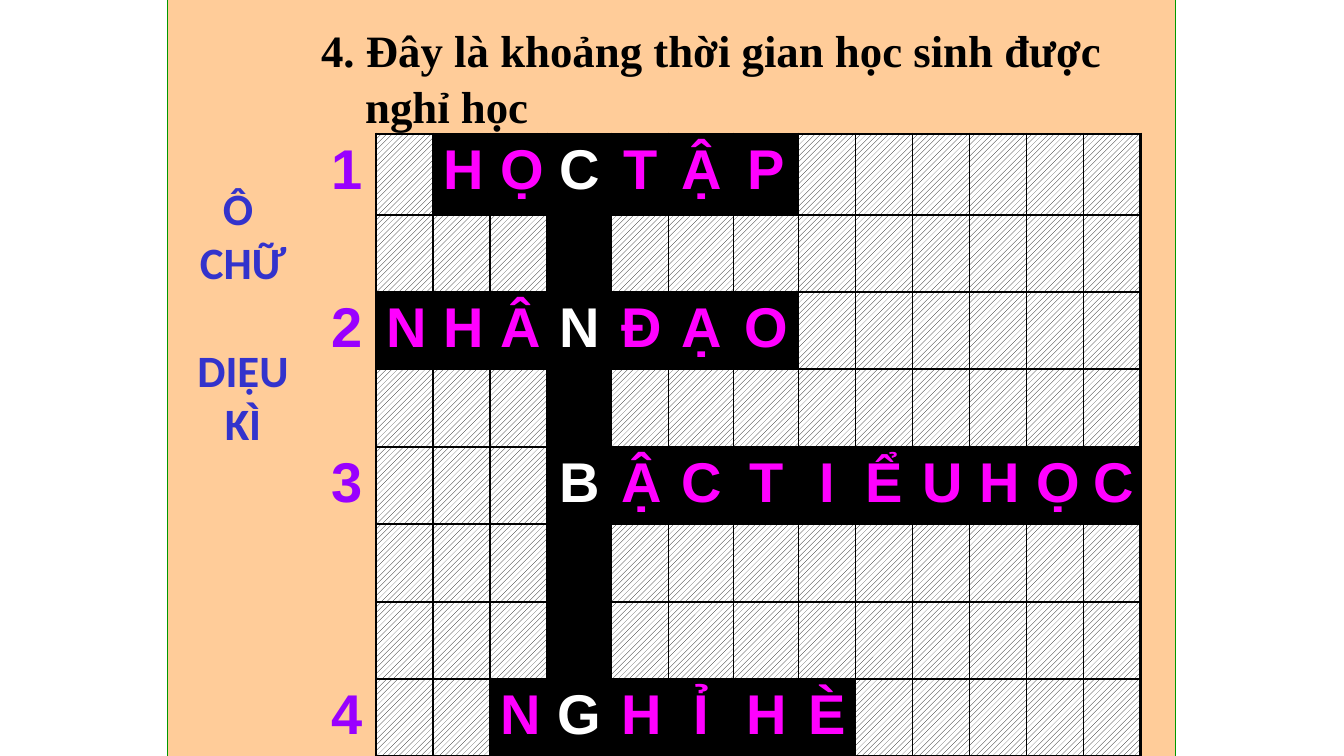
from lxml import etree
from pptx import Presentation
from pptx.dml.color import RGBColor
from pptx.enum.dml import MSO_PATTERN
from pptx.enum.shapes import MSO_SHAPE
from pptx.enum.text import MSO_ANCHOR, MSO_AUTO_SIZE, PP_ALIGN
from pptx.oxml.ns import qn
from pptx.util import Pt

RECT = MSO_SHAPE.RECTANGLE
HATCH = MSO_PATTERN.WIDE_UPWARD_DIAGONAL
TOP = MSO_ANCHOR.TOP
NO_FIT = MSO_AUTO_SIZE.NONE
LEFT, CENTER = PP_ALIGN.LEFT, PP_ALIGN.CENTER

SCALE = 914400 / 100.8
COLORS = {
    "peach": "FFCC99", "green": "009900", "black": "000000", "white": "FFFFFF",
    "number": "9900FF", "letter": "FF00FF", "label": "3333CC",
}
KEY_COL = 4
COL_WIDTHS = [57, 57, 57, 57, 65, 57, 65, 65] + [57] * 6
ROW_HEIGHTS = [81, 77, 77, 78, 77, 78, 77, 77]
# Row: (clue number, first column, answer)
ANSWERS = {
    0: ("1", 2, "HỌCTẬP"),
    2: ("2", 1, "NHÂNĐẠO"),
    4: ("3", 4, "BẬCTIỂUHỌC"),
    7: ("4", 3, "NGHỈHÈ"),
}


def px(n):
    return round(n * SCALE)


def color(name):
    return RGBColor.from_string(COLORS[name])


class CrosswordSlide:
    def __init__(self, prs):
        self.slide = prs.slides.add_slide(prs.slide_layouts[5])
        self.shapes = self.slide.shapes

    def style(self, p, font, size, ink, align):
        p.alignment = align
        p.font.name = font
        p.font.size = Pt(size)
        p.font.bold = True
        p.font.color.rgb = color(ink)

    def backdrop(self, x, y, w, h):
        sp = self.shapes.add_shape(RECT, px(x), px(y), px(w), px(h))
        sp.shadow.inherit = False
        sp.fill.solid()
        sp.fill.fore_color.rgb = color("peach")
        sp.line.color.rgb = color("green")
        sp.line.width = Pt(0.75)
        # The title placeholder stays in front of the backdrop
        self.shapes.title._element.addprevious(sp._element)

    def title(self, text, x, y, w, h, hanging):
        sp = self.shapes.title
        sp.left, sp.top, sp.width, sp.height = px(x), px(y), px(w), px(h)
        tf = sp.text_frame
        tf.text = text
        tf.word_wrap = True
        tf.auto_size = NO_FIT
        tf.vertical_anchor = TOP
        p = tf.paragraphs[0]
        self.style(p, "Times New Roman", 32, "black", LEFT)
        p.line_spacing = 1.05
        pPr = p._p.get_or_add_pPr()
        pPr.set("marL", str(px(hanging)))
        pPr.set("indent", str(-px(hanging)))

    def label(self, lines, x, y, w, h):
        tf = self.shapes.add_textbox(px(x), px(y), px(w), px(h)).text_frame
        tf.word_wrap = False
        tf.text = "\n".join(lines)
        for p in tf.paragraphs:
            self.style(p, "Calibri", 32, "label", CENTER)

    def borders(self, cell, **widths):
        tcPr = cell._tc.get_or_add_tcPr()
        for side in "LRTB":
            width = widths.get(side, 0)
            ln = etree.SubElement(tcPr, qn("a:ln" + side), w=str(Pt(width)))
            if width:
                fill = etree.SubElement(ln, qn("a:solidFill"))
                etree.SubElement(fill, qn("a:srgbClr"), val=COLORS["black"])
            else:
                etree.SubElement(ln, qn("a:noFill"))

    def cell(self, cell, text, fill, ink):
        if fill == "hatch":
            cell.fill.patterned()
            cell.fill.pattern = HATCH
            cell.fill.fore_color.rgb = color("black")
            cell.fill.back_color.rgb = color("white")
        else:
            cell.fill.solid()
            cell.fill.fore_color.rgb = color(fill)
        if text:
            cell.text = text
            self.style(cell.text_frame.paragraphs[0], "Arial", 40, ink, CENTER)

    def crossword(self, x, y):
        rows, cols = len(ROW_HEIGHTS), len(COL_WIDTHS)
        table = self.shapes.add_table(rows, cols, px(x), px(y), px(sum(COL_WIDTHS)),
                                      px(sum(ROW_HEIGHTS))).table
        table.first_row = table.horz_banding = False
        for column, width in zip(table.columns, COL_WIDTHS):
            column.width = px(width)
        for r, height in enumerate(ROW_HEIGHTS):
            table.rows[r].height = px(height)
            number, start, word = ANSWERS.get(r, ("", 0, ""))
            letters = dict(enumerate(word, start))
            # Clue number
            self.borders(table.cell(r, 0), R=1)
            self.cell(table.cell(r, 0), number, "peach", "number")
            # Letter squares
            for c in range(1, cols):
                self.borders(table.cell(r, c), L=1, R=2.25 if c == cols - 1 else 1,
                             T=2.25 if r == 0 else 1, B=2.25 if r == rows - 1 else 1)
                fill = "black" if c in letters or c == KEY_COL else "hatch"
                ink = "white" if c == KEY_COL else "letter"
                self.cell(table.cell(r, c), letters.get(c, ""), fill, ink)


def main():
    prs = Presentation()
    prs.slide_width, prs.slide_height = px(1344), px(756)
    s = CrosswordSlide(prs)
    s.backdrop(168, -8, 1008, 791)
    s.crossword(319, 134)
    s.title("4. Đây là khoảng thời gian học sinh được nghỉ học", 311, 15, 865, 118, 44)
    s.label(["Ô ", "CHỮ", " DIỆU", "KÌ"], 184, 176, 118, 537)
    prs.save("out.pptx")


if __name__ == "__main__":
    main()
